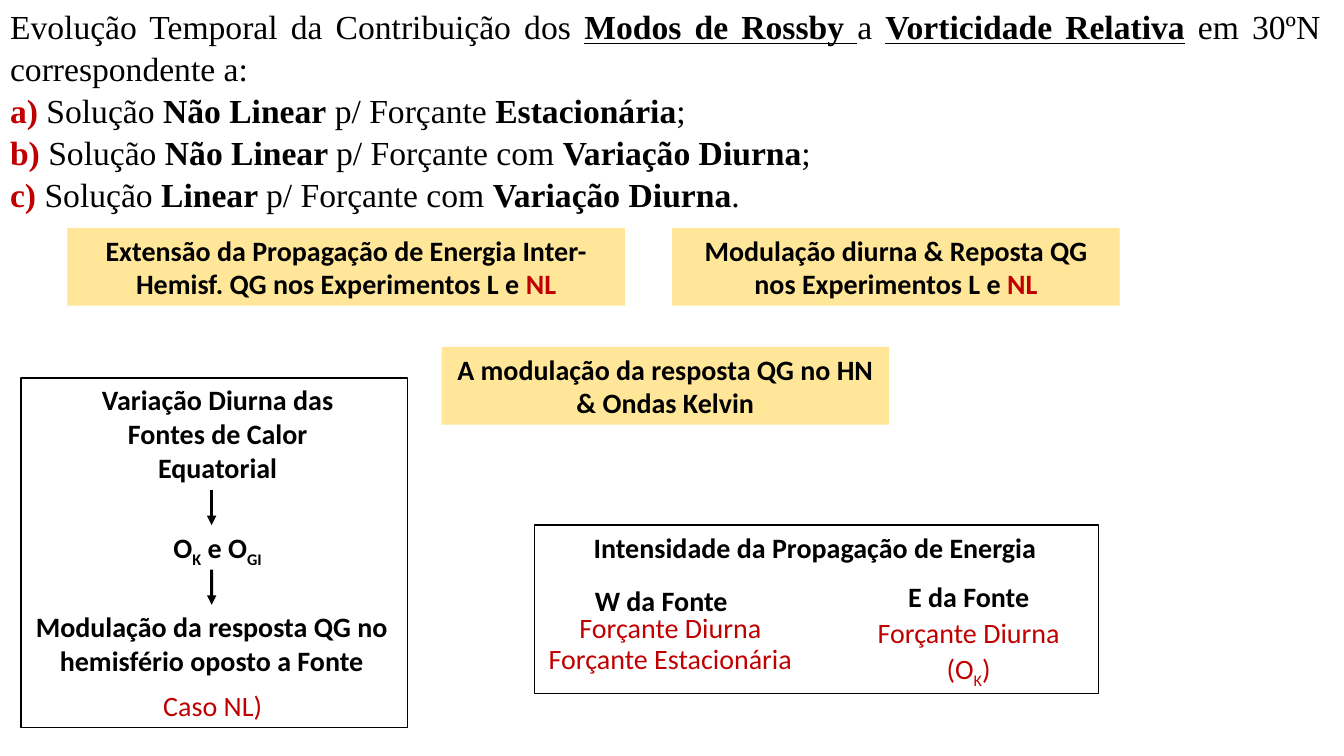
from dataclasses import dataclass
from typing import Optional

from lxml import etree
from pptx import Presentation
from pptx.dml.color import RGBColor
from pptx.enum.shapes import MSO_CONNECTOR, MSO_SHAPE
from pptx.enum.text import MSO_ANCHOR, MSO_AUTO_SIZE, PP_ALIGN
from pptx.oxml.ns import qn
from pptx.util import Pt

RECT = MSO_SHAPE.RECTANGLE
STRAIGHT = MSO_CONNECTOR.STRAIGHT
MIDDLE = MSO_ANCHOR.MIDDLE
NO_FIT = MSO_AUTO_SIZE.NONE
CENTER = PP_ALIGN.CENTER
JUSTIFY = PP_ALIGN.JUSTIFY

COLORS = {"black": "000000", "red": "C00000", "sand": "FFE699"}


def rgb(name: str) -> RGBColor:
    return RGBColor.from_string(COLORS[name])


@dataclass
class Span:
    text: str
    bold: Optional[bool] = None
    underline: Optional[bool] = None
    color: Optional[str] = None
    sub: bool = False


@dataclass
class Label:
    left: float
    top: float
    width: float
    height: float
    spans: list[Span]
    color: str = "black"
    fill: Optional[str] = None


@dataclass
class Frame:
    left: float
    top: float
    width: float
    height: float


@dataclass
class Arrow:
    x: float
    top: float
    bottom: float
    target: Optional[int] = None


def item(letter: str, kind: str, link: str, forcing: str, end: str) -> list[Span]:
    return [Span(f"{letter}) ", bold=True, color="red"), Span("Solução "),
            Span(kind, bold=True), Span(link), Span(forcing, bold=True), Span(end)]


HEADING = [
    [Span("Evolução Temporal da Contribuição dos "),
     Span("Modos de Rossby ", bold=True, underline=True), Span("a "),
     Span("Vorticidade Relativa", bold=True, underline=True),
     Span(" em 30ºN correspondente a:")],
    item("a", "Não Linear", " p/ Forçante ", "Estacionária", ";"),
    item("b", "Não Linear ", "p/ Forçante com ", "Variação Diurna", ";"),
    item("c", "Linear ", "p/ Forçante com ", "Variação Diurna", "."),
]

LINE_H, TWO_LINES_H = 31.5, 55.7
EAST_X, SIDE_W = 618.5, 146.9
FLOW_X = 151.2

LABELS = [
    Label(48.2, 162.7, 398.2, TWO_LINES_H,
          [Span("Extensão da Propagação de Energia Inter-Hemisf. QG nos Experimentos L e "),
           Span("NL", color="red")], fill="sand"),
    Label(480.2, 162.7, 319.7, TWO_LINES_H,
          [Span("Modulação diurna & Reposta QG nos Experimentos L e "),
           Span("NL", color="red")], fill="sand"),
    Label(315.4, 247.7, 319.7, TWO_LINES_H,
          [Span("A modulação da resposta QG no HN & Ondas Kelvin")], fill="sand"),
    Label(61.9, 270, 187.2, 80,
          [Span("Variação Diurna das Fontes de Calor Equatorial")]),
    Label(61.9, 375.1, 187.2, LINE_H,
          [Span("O"), Span("K", sub=True), Span(" e O"), Span("GI", sub=True)]),
    Label(-8.6, 432, 319.6, TWO_LINES_H,
          [Span("Modulação da resposta QG no hemisfério oposto a Fonte")]),
    Label(403.9, 375.1, 356.4, LINE_H, [Span("Intensidade da Propagação de Energia")]),
    Label(EAST_X, 410.4, SIDE_W, LINE_H, [Span("E da Fonte")]),
    Label(398.9, 413.3, SIDE_W, LINE_H, [Span("W da Fonte")]),
    Label(EAST_X, 436.3, SIDE_W, LINE_H, [Span("Forçante Diurna")], "red"),
    Label(405.4, 432.7, SIDE_W, LINE_H, [Span("Forçante Diurna")], "red"),
    Label(378.7, 454.3, 200.2, LINE_H, [Span("Forçante Estacionária")], "red"),
    Label(EAST_X, 461.5, SIDE_W, LINE_H,
          [Span("(O"), Span("K", sub=True), Span(")")], "red"),
    Label(78.5, 488.2, SIDE_W, LINE_H, [Span("Caso NL)")], "red"),
]
RESPONSE = 5

FRAMES = [Frame(15.1, 270, 275.8, 249.8), Frame(381.6, 375.1, 403.2, 120.2)]
ARROWS = [Arrow(FLOW_X, 350, 375.1), Arrow(FLOW_X, 406.8, 432, RESPONSE)]


def write(p, spans: list[Span], font: str, size: float, color: str, align) -> None:
    p.alignment = align
    p.font.name = font
    p.font.size = Pt(size)
    p.font.color.rgb = rgb(color)
    for span in spans:
        r = p.add_run()
        r.text = span.text
        if span.bold is not None:
            r.font.bold = span.bold
        if span.underline is not None:
            r.font.underline = span.underline
        if span.color:
            r.font.color.rgb = rgb(span.color)
        if span.sub:
            r.font._element.set("baseline", "-25000")


def draw_heading(s) -> None:
    sp = s.shapes.title
    sp.left, sp.top, sp.width, sp.height = Pt(0), Pt(0), Pt(950.4), Pt(156.2)
    tf = sp.text_frame
    tf.auto_size = NO_FIT
    tf.vertical_anchor = MIDDLE
    for i, spans in enumerate(HEADING):
        p = tf.add_paragraph() if i else tf.paragraphs[0]
        p.line_spacing = 1.04
        write(p, spans, "Times New Roman", 24, "black", JUSTIFY)


def draw_label(s, label: Label):
    place = Pt(label.left), Pt(label.top), Pt(label.width), Pt(label.height)
    if label.fill:
        sp = s.shapes.add_shape(RECT, *place)
        sp.shadow.inherit = False
        sp.fill.solid()
        sp.fill.fore_color.rgb = rgb(label.fill)
        sp.line.fill.background()
    else:
        sp = s.shapes.add_textbox(*place)
    tf = sp.text_frame
    tf.word_wrap = True
    p = tf.paragraphs[0]
    write(p, label.spans, "Calibri", 20, label.color, CENTER)
    p.font.bold = label.color == "black"
    return sp


def draw_frame(s, frame: Frame) -> None:
    sp = s.shapes.add_shape(RECT, Pt(frame.left), Pt(frame.top),
                            Pt(frame.width), Pt(frame.height))
    sp.shadow.inherit = False
    sp.fill.background()
    sp.line.color.rgb = rgb("black")
    sp.line.width = Pt(1)


def draw_arrow(s, arrow: Arrow, boxes: list) -> None:
    sp = s.shapes.add_connector(STRAIGHT, Pt(arrow.x), Pt(arrow.top),
                                Pt(arrow.x), Pt(arrow.bottom))
    if arrow.target is not None:
        sp.end_connect(boxes[arrow.target], 0)
    sp.line.color.rgb = rgb("black")
    sp.line.width = Pt(2.25)
    etree.SubElement(sp.line._get_or_add_ln(), qn("a:tailEnd"), type="triangle")
    etree.SubElement(sp._element.spPr, qn("a:effectLst"))


def main() -> None:
    prs = Presentation()
    prs.slide_width, prs.slide_height = Pt(960), Pt(540)
    s = prs.slides.add_slide(prs.slide_layouts[5])
    draw_heading(s)
    boxes = [draw_label(s, label) for label in LABELS]
    for frame in FRAMES:
        draw_frame(s, frame)
    for arrow in ARROWS:
        draw_arrow(s, arrow, boxes)
    prs.save("out.pptx")


if __name__ == "__main__":
    main()
